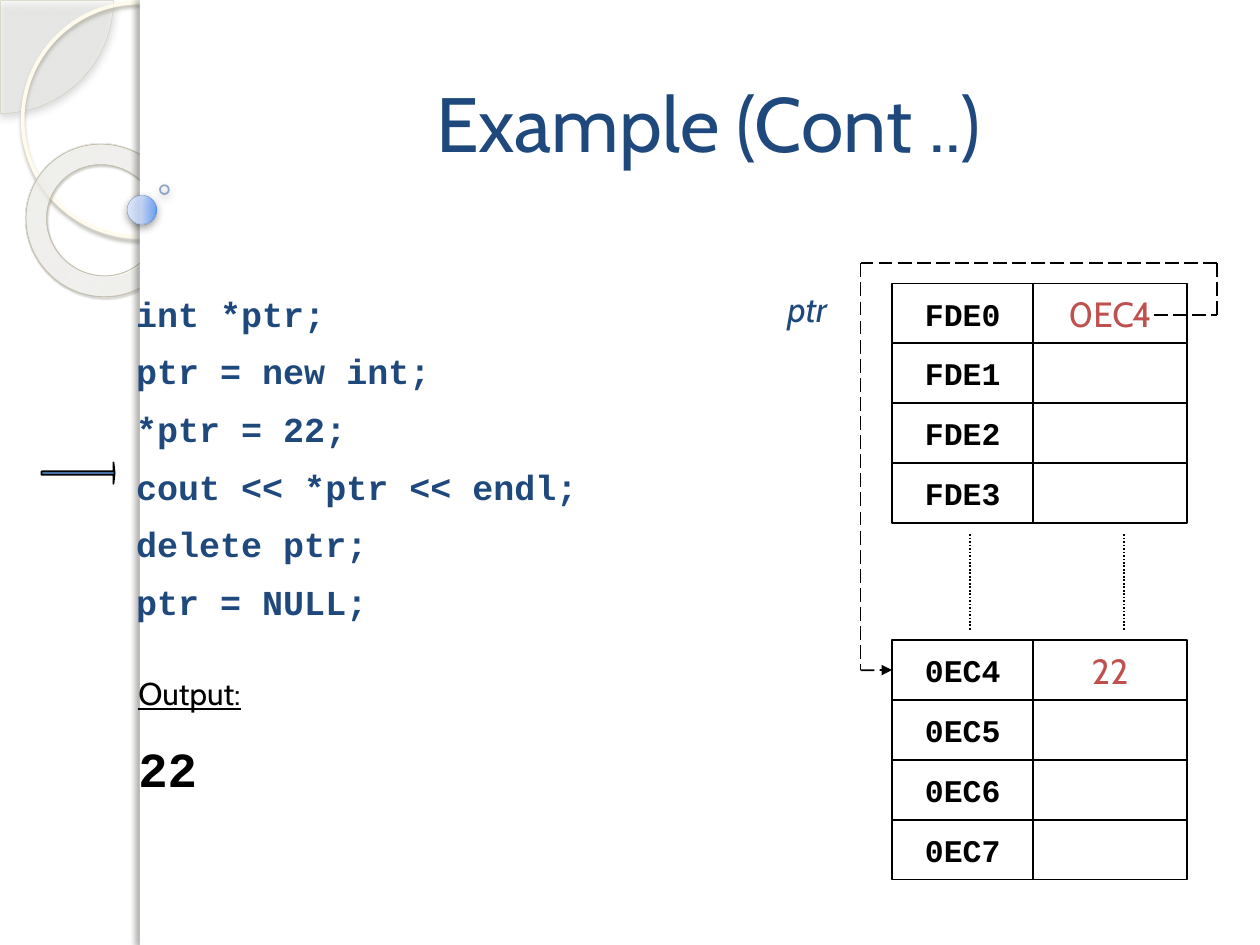
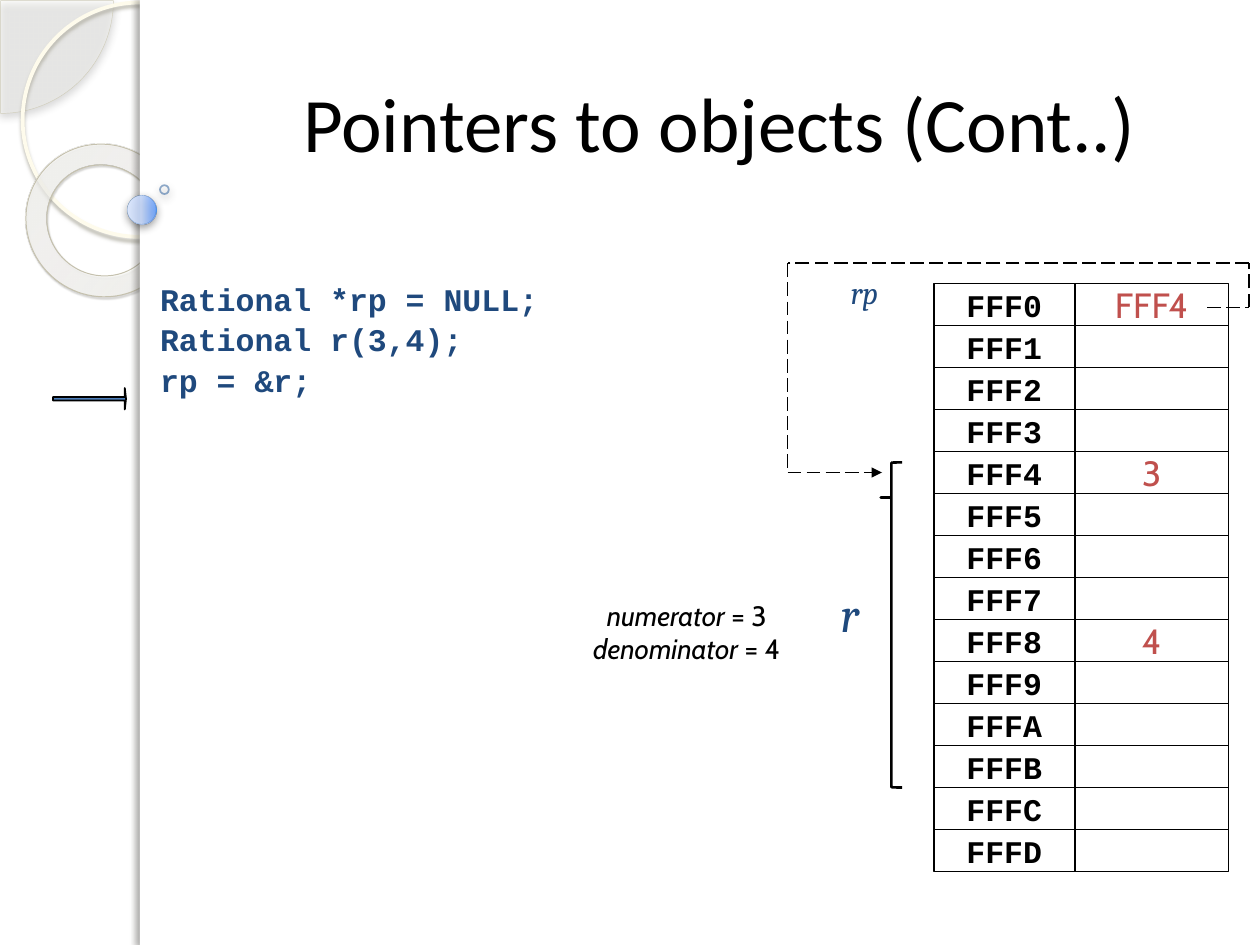
import dataclasses

import lxml.etree
import pptx
import pptx.dml.color
import pptx.enum.dml
import pptx.enum.shapes
import pptx.enum.text
import pptx.oxml.ns
import pptx.util

Inches = pptx.util.Inches
Pt = pptx.util.Pt
qn = pptx.oxml.ns.qn
Shape = pptx.enum.shapes.MSO_SHAPE
Dash = pptx.enum.dml.MSO_LINE
Align = pptx.enum.text.PP_ALIGN
Anchor = pptx.enum.text.MSO_ANCHOR


@dataclasses.dataclass(frozen=True)
class Look:
    font: str
    size: int
    color: str
    bold: bool = False
    italic: bool = False
    under: bool = False


@dataclasses.dataclass(frozen=True)
class Theme:
    ink: str = "000000"
    navy: str = "1F497D"
    red: str = "C0504D"
    blue: str = "4F81BD"
    white: str = "FFFFFF"
    pie: str = "FDFDF9"
    pie_edge: str = "D1CEBB"
    ring: str = "FEFBEC"
    donut_edge: str = "C5C1AE"
    ball_edge: str = "467BBA"
    dot_edge: str = "4672A7"
    # Gradient stops: place, colour, opacity
    donut: tuple = ((0, "FEFDFA", 70), (70, "FFFFFC", 55), (100, "E2DBB7", 60))
    ball: tuple = ((0, "DEE9FF", 95), (50, "C2D5F9", 90),
                   (95, "6BA1FC", 88), (100, "0174FF", 85))
    # Shadows: colour, opacity, blur, distance, angle
    soft: tuple = ("000000", 44, 5, 2, 90)
    ring_shade: tuple = ("B2B0A4", 85, 2, 2, 90)
    donut_shade: tuple = ("5A5850", 35, 1, 1.2, 75)
    edge_shade: tuple = ("77756F", 25, 3, 3, 180)
    # Type
    title: Look = Look("Cabin", 44, navy)
    plain_title: Look = Look("Calibri", 44, ink)
    code: Look = Look("Courier New", 20, navy, bold=True)
    small_code: Look = Look("Courier New", 18, navy, bold=True)
    key: Look = Look("Courier New", 18, ink, bold=True)
    value: Look = Look("Cabin", 20, red)
    label: Look = Look("Cabin", 20, navy, italic=True)
    small_label: Look = Look("Cambria", 18, navy, italic=True)
    big_label: Look = Look("Cambria", 28, navy, italic=True)
    field: Look = Look("Cabin", 16, ink, italic=True)
    head: Look = Look("Cabin", 18, ink, under=True)
    result: Look = Look("Courier New", 28, ink, bold=True)


def rgb(color):
    return pptx.dml.color.RGBColor.from_string(color)


def fade(node, alpha):
    """Set the opacity, in percent, of a colour element."""
    lxml.etree.SubElement(node, qn("a:alpha"), val=str(alpha * 1000))


def tint(parent, color, alpha):
    fade(lxml.etree.SubElement(parent, qn("a:srgbClr"), val=color), alpha)


class Deck:
    def __init__(self, theme):
        self.theme = theme
        self.file = pptx.Presentation()
        self.file.slide_width, self.file.slide_height = Inches(10), Inches(7.5)
        self.layout = self.file.slide_layouts[1]
        self.slide = None

    def page(self):
        self.slide = self.file.slides.add_slide(self.layout)

    # Text
    def style(self, part, look):
        for run in part.runs:
            font = run.font
            font.name, font.size = look.font, Pt(look.size)
            font.bold, font.italic, font.underline = look.bold, look.italic, look.under
            font.color.rgb = rgb(look.color)

    def place(self, shape, box):
        shape.left, shape.top, shape.width, shape.height = map(Inches, box)

    def letter(self, frame, lines, look, align=Align.LEFT, pad=0.1):
        frame.margin_left = frame.margin_right = Inches(pad)
        frame.margin_top = frame.margin_bottom = Inches(0.05)
        frame.text = "\n".join(lines)
        for part in frame.paragraphs:
            part.alignment = align
            self.style(part, look)

    def title(self, text, box, look):
        shape = self.slide.shapes.title
        self.place(shape, box)
        shape.text_frame.vertical_anchor = Anchor.MIDDLE
        self.letter(shape.text_frame, [text], look, Align.CENTER)

    def code(self, lines, box, look, pad, pitch, gap):
        shape = self.slide.placeholders[1]
        self.place(shape, box)
        frame = shape.text_frame
        frame.auto_size = pptx.enum.text.MSO_AUTO_SIZE.NONE
        self.letter(frame, lines, look, pad=pad)
        for n, part in enumerate(frame.paragraphs):
            props = part._p.get_or_add_pPr()
            props.set("marL", "0")
            props.set("indent", "0")
            lxml.etree.SubElement(props, qn("a:buNone"))
            part.line_spacing = pitch
            part.space_before = Pt(gap if n else 0)

    def note(self, lines, box, look, align=Align.LEFT, pad=0.1):
        shape = self.slide.shapes.add_textbox(*map(Inches, box))
        shape.text_frame.word_wrap = True
        self.letter(shape.text_frame, lines, look, align, pad)
        return shape.text_frame

    # Shapes
    def shape(self, kind, box, fill=None, line=None, width=1, shade=None,
              adjust=(), alpha=None, edge=None):
        shape = self.slide.shapes.add_shape(kind, *map(Inches, box))
        shape.shadow.inherit = False
        for n, value in enumerate(adjust):
            shape.adjustments[n] = value
        props = shape.element.spPr
        if fill is None:
            shape.fill.background()
        elif isinstance(fill, tuple):
            self.blend(shape, fill)
        else:
            shape.fill.solid()
            shape.fill.fore_color.rgb = rgb(fill)
            if alpha:
                fade(props.find(qn("a:solidFill")).find(qn("a:srgbClr")), alpha)
        if line:
            shape.line.color.rgb = rgb(line)
            shape.line.width = Pt(width)
            if edge:
                fade(next(props.find(qn("a:ln")).iter(qn("a:srgbClr"))), edge)
        else:
            shape.line.fill.background()
        if shade:
            color, dim, blur, gap, angle = shade
            cast = lxml.etree.SubElement(
                props.find(qn("a:effectLst")), qn("a:outerShdw"),
                blurRad=str(Pt(blur)), dist=str(Pt(gap)),
                dir=str(angle * 60000), rotWithShape="0")
            tint(cast, color, dim)
        return shape

    def blend(self, shape, stops):
        shape.fill.gradient()
        shape.fill.gradient_angle = 0
        group = next(shape.element.spPr.iter(qn("a:gsLst")))
        for old in list(group):
            group.remove(old)
        for at, color, alpha in stops:
            stop = lxml.etree.SubElement(group, qn("a:gs"), pos=str(at * 1000))
            tint(stop, color, alpha)

    def line(self, start, end, dash=Dash.LONG_DASH, arrow=False):
        line = self.slide.shapes.add_connector(
            pptx.enum.shapes.MSO_CONNECTOR.STRAIGHT, *map(Inches, start + end))
        line.line.color.rgb = rgb(self.theme.ink)
        line.line.width = Pt(1)
        line.line.dash_style = dash
        props = line.element.spPr
        if arrow:
            lxml.etree.SubElement(props.find(qn("a:ln")), qn("a:tailEnd"), type="triangle")
        lxml.etree.SubElement(props, qn("a:effectLst"))
        return line

    def route(self, spots):
        """Draw a dashed path through the spots; return its arrow."""
        last = len(spots) - 2
        for n, (start, end) in enumerate(zip(spots, spots[1:])):
            line = self.line(start, end, arrow=n == last)
        return line

    def marker(self, left, top):
        self.shape(Shape.RIGHT_ARROW, (left, top, 0.58, 0.17), self.theme.blue,
                   self.theme.ink, adjust=(0.162, 0.054))

    def memory(self, left, top, high, keys, values):
        """Draw rows of address and value cells; return the address cells."""
        cells = {}
        for n, key in enumerate(keys):
            y = top + n * high
            pair = ((left, 1.12, key, self.theme.key),
                    (left + 1.12, 1.22, values.get(key), self.theme.value))
            for x, wide, text, look in pair:
                cell = self.shape(Shape.RECTANGLE, (x, y, wide, high), line=self.theme.ink)
                if text:
                    frame = cell.text_frame
                    frame.word_wrap = False
                    frame.vertical_anchor = Anchor.MIDDLE
                    self.letter(frame, [text], look, Align.CENTER)
                if look is self.theme.key:
                    cells[key] = cell
        return cells

    # Side band, drawn once and kept on the layout
    def band(self):
        t = self.theme
        donut = self.shape(Shape.DONUT, (0.2, 1.15, 1.23, 1.2), t.donut, t.donut_edge,
                           0.57, t.donut_shade, adjust=(0.138,))
        donut.rotation = 38.6
        parts = [
            self.shape(Shape.PIE, (-0.89, -0.89, 1.79, 1.79), t.pie, t.pie_edge, 0.25,
                       t.soft, adjust=(0, 54.02), alpha=33),
            self.shape(Shape.OVAL, (0.18, 0.02, 1.86, 1.86), None, t.ring, 2.15,
                       t.ring_shade),
            donut,
            self.shape(Shape.RECTANGLE, (1.11, 0, 8.89, 7.5), t.white, shade=t.soft),
            self.shape(Shape.RECTANGLE, (1.11, 0, 0.08, 7.5), t.white, shade=t.edge_shade),
            self.shape(Shape.OVAL, (1.01, 1.55, 0.23, 0.23), t.ball, t.ball_edge, 0.17,
                       t.soft, edge=60),
            self.shape(Shape.OVAL, (1.27, 1.47, 0.07, 0.07), None, t.dot_edge, 1,
                       t.soft, edge=60),
        ]
        tree = self.layout.shapes.element
        for n, part in enumerate(parts):
            part.element.nvSpPr.cNvPr.set("id", str(20 + n))
            tree.insert(2 + n, part.element)


def example(deck):
    t = deck.theme
    deck.title("Example (Cont ..)", (2, 0.35, 7.25, 1.23), t.title)
    deck.code(["int *ptr;", "ptr = new int;", "*ptr = 22;", "cout << *ptr << endl;",
               "delete ptr;", "ptr = NULL;"],
              (1.08, 2.17, 4.25, 2.92), t.code, pad=0, pitch=1.3, gap=1.7)
    deck.marker(0.33, 3.67)

    # Two memory blocks with the gap between them
    deck.memory(7.08, 2.25, 0.475, [f"FDE{n}" for n in range(4)], {"FDE0": "0EC4"})
    heap = deck.memory(7.08, 5.08, 0.475, [f"0EC{n}" for n in range(4, 8)], {"0EC4": "22"})
    for x in (7.7, 8.92):
        deck.line((x, 4.24), (x, 5), Dash.ROUND_DOT)

    # Pointer path
    deck.note(["ptr"], (6.25, 2.23, 0.75, 0.44), t.label, pad=0)
    arrow = deck.route([(9.16, 2.5), (9.66, 2.5), (9.66, 2.09), (6.83, 2.09),
                        (6.83, 5.32), (7.08, 5.32)])
    arrow.end_connect(heap["0EC4"], 1)

    # Program output
    frame = deck.note(["Output:", "22"], (1, 5.36, 2.42, 1.21), t.head)
    head, result = frame.paragraphs
    head.line_spacing = result.line_spacing = 0.8
    result.space_before = Pt(22)
    deck.style(result, t.result)


def objects(deck):
    t = deck.theme
    deck.title("Pointers to objects (Cont..)", (2, 0.35, 7.42, 1.23), t.plain_title)
    deck.code(["Rational *rp = NULL;", "Rational r(3,4);", "rp = &r;"],
              (1.17, 2.17, 4.92, 1.67), t.small_code, pad=0.1, pitch=1, gap=1.5)
    deck.marker(0.42, 3.08)

    # Memory and the span of the object
    deck.memory(7.41, 2.25, 1 / 3, [f"FFF{n:X}" for n in range(14)],
                {"FFF0": "FFF4", "FFF4": "3", "FFF8": "4"})
    deck.shape(Shape.LEFT_BRACE, (6.99, 3.67, 0.17, 2.58), line=t.ink, width=1.5,
               adjust=(0.018, 0.108))
    frame = deck.note(["numerator", "denominator"], (4.49, 4.7, 1.92, 0.9), t.field,
                      Align.CENTER)
    plain = dataclasses.replace(t.field, italic=False)
    for part, text in zip(frame.paragraphs, (" = 3", " = 4")):
        name = part.runs[0]
        part.add_run().text = text
        deck.style(part, plain)
        name.font.italic = True

    # Pointer path
    deck.route([(9.58, 2.44), (9.91, 2.44), (9.91, 2.09), (6.25, 2.09),
                (6.25, 3.75), (7, 3.75)])
    deck.note(["r"], (6.67, 4.58, 0.33, 0.57), t.big_label, pad=0)
    deck.note(["rp"], (6.75, 2.12, 0.75, 0.4), t.small_label, pad=0)


def main():
    deck = Deck(Theme())
    deck.page()
    deck.band()
    example(deck)
    deck.page()
    objects(deck)
    deck.file.save("out.pptx")


if __name__ == "__main__":
    main()
